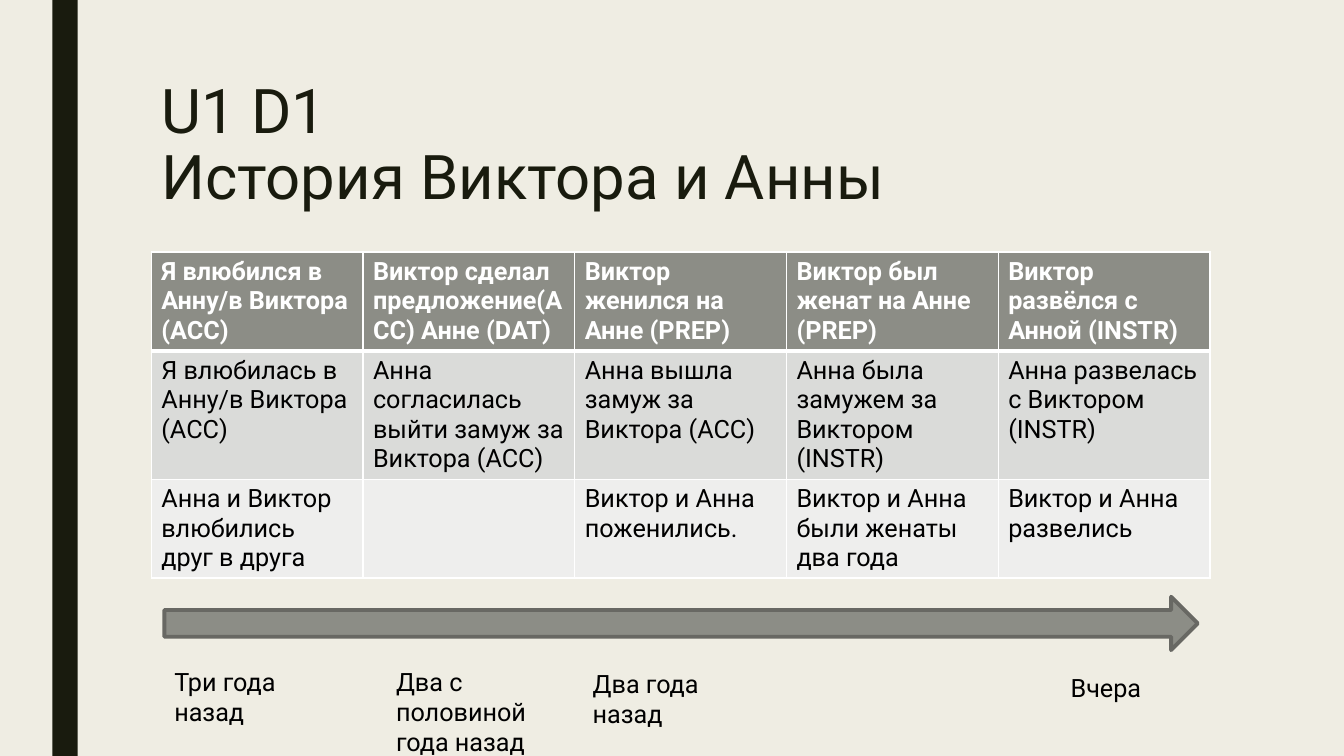
from dataclasses import dataclass

from lxml import etree
from pptx import Presentation
from pptx.dml.color import RGBColor
from pptx.enum.shapes import MSO_SHAPE
from pptx.enum.text import MSO_ANCHOR, MSO_AUTO_SIZE, PP_ALIGN
from pptx.oxml.ns import qn
from pptx.util import Inches, Pt

RECT, RIGHT_ARROW = MSO_SHAPE.RECTANGLE, MSO_SHAPE.RIGHT_ARROW
TOP, LEFT, NO_FIT = MSO_ANCHOR.TOP, PP_ALIGN.LEFT, MSO_AUTO_SIZE.NONE


@dataclass(frozen=True)
class Theme:
    """Colours, font and type sizes of the slide."""
    font: str = "Roboto"
    title_size: int = 44
    body_size: int = 18
    background: str = "EFEDE3"
    dark: str = "191B0E"
    accent: str = "8C8D86"
    outline: str = "686863"
    white: str = "FFFFFF"
    black: str = "000000"
    row_fills: tuple = ("8C8D86", "DADBD9", "EEEEED")


THEME = Theme()
TITLE = "U1 D1\vИстория Виктора и Анны"
STORY = [
    ["Я влюбился в Анну/в Виктора (ACC)", "Виктор сделал предложение(ACC) Анне (DAT)",
     "Виктор женился на Анне (PREP)", "Виктор был женат на Анне (PREP)",
     "Виктор развёлся с Анной (INSTR)"],
    ["Я влюбилась в Анну/в Виктора (ACC)", "Анна согласилась выйти замуж за Виктора (ACC)",
     "Анна вышла замуж за Виктора (ACC)", "Анна была замужем за Виктором (INSTR)",
     "Анна развелась с Виктором (INSTR)"],
    ["Анна и Виктор влюбились друг в друга", "", "Виктор и Анна поженились.",
     "Виктор и Анна были женаты два года", "Виктор и Анна развелись"],
]
ROW_HEIGHTS = [0.98, 1.27, 0.98]
MOMENTS = [
    ("Три года назад", 1.63, 6.56, 1.81, 0.4),
    ("Два с половиной года назад", 3.83, 6.56, 1.56, 1.01),
    ("Два года назад", 5.78, 6.58, 1.85, 0.4),
    ("Вчера", 10.52, 6.62, 0.94, 0.4),
]


def rgb(color):
    """Turn a hex string into a colour."""
    return RGBColor.from_string(color)


def set_text(tf, text, size=THEME.body_size, color=THEME.black, bold=False, spacing=None):
    """Write left-aligned, formatted text into a wrapping frame."""
    tf.text = text
    tf.word_wrap = True
    p = tf.paragraphs[0]
    p.alignment = LEFT
    p.line_spacing = spacing
    font = p.font
    font.size, font.bold = Pt(size), bold
    for r in p.runs:
        r.font.name, r.font.size, r.font.bold = THEME.font, Pt(size), bold
        r.font.color.rgb = rgb(color)


def add_block(slide, kind, box, fill, line=None, width=0):
    """Add a flat preset shape with an optional outline."""
    sp = slide.shapes.add_shape(kind, *map(Inches, box))
    sp.shadow.inherit = False
    sp.fill.solid()
    sp.fill.fore_color.rgb = rgb(fill)
    if line:
        sp.line.color.rgb = rgb(line)
        sp.line.width = Pt(width)
    else:
        sp.line.fill.background()


def add_title(slide, text):
    """Place and format the title placeholder."""
    sp = slide.shapes.title
    sp.left, sp.top, sp.width, sp.height = map(Inches, (1.5, 0.75, 10.5, 1.62))
    tf = sp.text_frame
    set_text(tf, text, size=THEME.title_size, color=THEME.dark, spacing=0.89)
    tf.auto_size = NO_FIT
    tf.vertical_anchor = TOP


def set_borders(cell, **widths):
    """Draw white cell borders, one point wide unless told otherwise."""
    tc_pr = cell._tc.get_or_add_tcPr()
    for side in ("lnL", "lnR", "lnT", "lnB"):
        ln = etree.SubElement(tc_pr, qn(f"a:{side}"), w=str(Pt(widths.get(side, 1))))
        fill = etree.SubElement(ln, qn("a:solidFill"))
        etree.SubElement(fill, qn("a:srgbClr"), val=THEME.white)


def add_story_table(slide):
    """Add the table of events with its header row."""
    size = len(STORY), len(STORY[0])
    box = map(Inches, (1.5, 2.5, 10.5, sum(ROW_HEIGHTS)))
    table = slide.shapes.add_table(*size, *box).table
    for i, texts in enumerate(STORY):
        table.rows[i].height = Inches(ROW_HEIGHTS[i])
        header = i == 0
        thick = {0: {"lnB": 3}, 1: {"lnT": 3}}.get(i, {})
        for j, text in enumerate(texts):
            cell = table.cell(i, j)
            set_borders(cell, **thick)
            cell.fill.solid()
            cell.fill.fore_color.rgb = rgb(THEME.row_fills[i])
            set_text(cell.text_frame, text, bold=header,
                     color=THEME.white if header else THEME.black)


def add_label(slide, text, *box):
    """Add a time label below the arrow."""
    sp = slide.shapes.add_textbox(*map(Inches, box))
    set_text(sp.text_frame, text)


def main():
    """Build and save the slide."""
    prs = Presentation()
    prs.slide_width, prs.slide_height = Inches(13.33), Inches(7.5)
    slide = prs.slides.add_slide(prs.slide_layouts[5])
    slide.background.fill.solid()
    slide.background.fill.fore_color.rgb = rgb(THEME.background)
    add_block(slide, RECT, (0.52, 0, 0.25, 7.5), THEME.dark)
    add_title(slide, TITLE)
    add_story_table(slide)
    add_block(slide, RIGHT_ARROW, (1.63, 5.92, 10.25, 0.53), THEME.accent,
              line=THEME.outline, width=2.75)
    for moment in MOMENTS:
        add_label(slide, *moment)
    prs.save("out.pptx")


if __name__ == "__main__":
    main()
